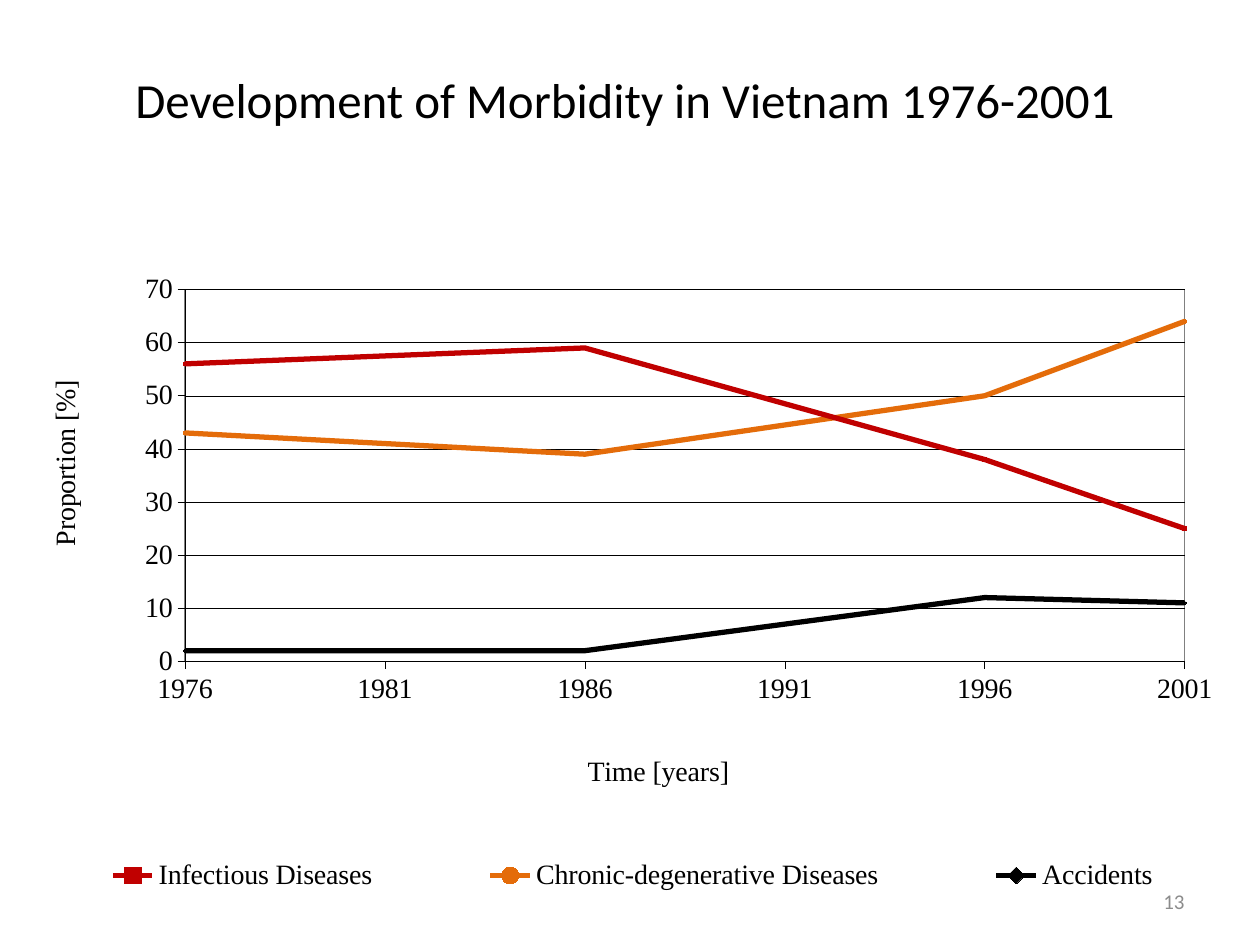
from dataclasses import dataclass

from lxml.etree import SubElement
from pptx import Presentation
from pptx.chart.data import XyChartData
from pptx.dml.color import RGBColor
from pptx.enum.chart import XL_CHART_TYPE as ChartType
from pptx.enum.chart import XL_LEGEND_POSITION as LegendPos
from pptx.enum.chart import XL_MARKER_STYLE as Marker
from pptx.enum.chart import XL_TICK_MARK as Tick
from pptx.enum.dml import MSO_LINE as Dash
from pptx.enum.text import MSO_ANCHOR as Anchor
from pptx.enum.text import PP_ALIGN as Align
from pptx.oxml import parse_xml
from pptx.oxml.ns import nsdecls, qn
from pptx.util import Cm, Pt

BLACK = RGBColor(0x00, 0x00, 0x00)
RED = RGBColor(0xC0, 0x00, 0x00)
ORANGE = RGBColor(0xE4, 0x6C, 0x0A)
GREY = RGBColor(0x8C, 0x8C, 0x8C)
SERIF = "Times New Roman"
SANS = "Calibri"
YEARS = (1976, 1986, 1996, 2001)


@dataclass
class Disease:
    name: str
    shares: tuple
    color: RGBColor
    marker: Marker


@dataclass
class AxisSpec:
    title: str
    low: int
    high: int
    step: int
    x: float
    y: float
    rotation: int


@dataclass
class Label:
    text: str
    box: tuple
    size: int
    color: RGBColor
    align: Align


DISEASES = (
    Disease("Infectious Diseases", (56, 59, 38, 25), RED, Marker.SQUARE),
    Disease("Chronic-degenerative Diseases", (43, 39, 50, 64), ORANGE, Marker.CIRCLE),
    Disease("Accidents", (2, 2, 12, 11), BLACK, Marker.DIAMOND),
)
TIME = AxisSpec("Time [years]", 1976, 2001, 5, 0.46, 0.73, 0)
PROPORTION = AxisSpec("Proportion [%]", 0, 70, 10, 0.03, 0.22, -5400000)
LABELS = (
    Label("Development of Morbidity in Vietnam 1976-2001 ",
          (0.43, 0.81, 24.56, 2.36), 28, BLACK, Align.CENTER),
    Label("13", (18.21, 17.65, 5.92, 1.02), 12, GREY, Align.RIGHT),
)


def set_font(font, size: int, color: RGBColor, name: str) -> None:
    font.size = Pt(size)
    font.name = name
    font.bold = False
    font.color.rgb = color


def set_line(line, color: RGBColor, width: float) -> None:
    line.color.rgb = color
    line.width = Pt(width)


def set_layout(parent, index: int, **values) -> None:
    for old in parent.findall(qn("c:layout")):
        parent.remove(old)
    layout = parse_xml(f"<c:layout {nsdecls('c')}><c:manualLayout/></c:layout>")
    for tag, value in values.items():
        SubElement(layout[0], qn(f"c:{tag}")).set("val", str(value))
    parent.insert(index, layout)


def style_axis(axis, spec: AxisSpec) -> None:
    axis.minimum_scale, axis.maximum_scale = spec.low, spec.high
    axis.major_unit = spec.step
    axis.major_tick_mark = Tick.OUTSIDE
    axis.minor_tick_mark = Tick.NONE
    axis.has_major_gridlines = False
    set_font(axis.tick_labels.font, 16, BLACK, SERIF)
    set_line(axis.format.line, BLACK, 0.25)
    title = axis.axis_title
    tf = title.text_frame
    tf.text = spec.title
    set_font(tf.paragraphs[0].runs[0].font, 16, BLACK, SERIF)
    body = tf._txBody.find(qn("a:bodyPr"))
    body.set("rot", str(spec.rotation))
    body.set("vert", "horz")
    set_layout(title._element, 1, xMode="edge", yMode="edge", x=spec.x, y=spec.y)


def style_series(series, disease: Disease) -> None:
    series.smooth = True
    set_line(series.format.line, disease.color, 3)
    marker = series.marker
    marker.style = disease.marker
    marker.size = 2
    marker.format.fill.solid()
    marker.format.fill.fore_color.rgb = disease.color
    set_line(marker.format.line, BLACK, 0.75)


def add_morbidity_chart(slide) -> None:
    data = XyChartData()
    for disease in DISEASES:
        series = data.add_series(disease.name, number_format="General")
        for year, share in zip(YEARS, disease.shares):
            series.add_data_point(year, share)
    chart = slide.shapes.add_chart(
        ChartType.XY_SCATTER_SMOOTH, Cm(0.08), Cm(4.32), Cm(25.35), Cm(14.73), data
    ).chart
    chart.has_title = False
    set_font(chart.font, 8, BLACK, SERIF)
    style_axis(chart.category_axis, TIME)
    style_axis(chart.value_axis, PROPORTION)
    chart.value_axis.has_major_gridlines = True
    grid = chart.value_axis.major_gridlines.format.line
    set_line(grid, BLACK, 0.25)
    grid.dash_style = Dash.ROUND_DOT

    plot = chart.plots[0]
    plot.vary_by_categories = False
    for series, disease in zip(plot.series, DISEASES):
        style_series(series, disease)
    area = plot._element.getparent()
    set_layout(area, 0, layoutTarget="inner", xMode="edge", yMode="edge",
               x=0.144, y=0.103, w=0.795, h=0.509)
    area.append(parse_xml(
        f'<c:spPr {nsdecls("c", "a")}><a:noFill/><a:ln w="9525"><a:solidFill>'
        '<a:srgbClr val="808080"/></a:solidFill></a:ln></c:spPr>'
    ))

    chart.has_legend = True
    legend = chart.legend
    legend.position = LegendPos.BOTTOM
    legend.include_in_layout = False
    set_font(legend.font, 16, BLACK, SERIF)
    set_layout(legend._element, 1, xMode="edge", yMode="edge", x=0, y=0.88, w=1, h=0.05)


def add_label(slide, label: Label) -> None:
    tf = slide.shapes.add_textbox(*map(Cm, label.box)).text_frame
    tf.word_wrap = True
    tf.vertical_anchor = Anchor.MIDDLE
    tf.text = label.text
    p = tf.paragraphs[0]
    p.alignment = label.align
    set_font(p.runs[0].font, label.size, label.color, SANS)


def main() -> None:
    prs = Presentation()
    prs.slide_width, prs.slide_height = Cm(25.4), Cm(19.05)
    s = prs.slides.add_slide(prs.slide_layouts[6])
    add_morbidity_chart(s)
    for label in LABELS:
        add_label(s, label)
    prs.save("out.pptx")


if __name__ == "__main__":
    main()
